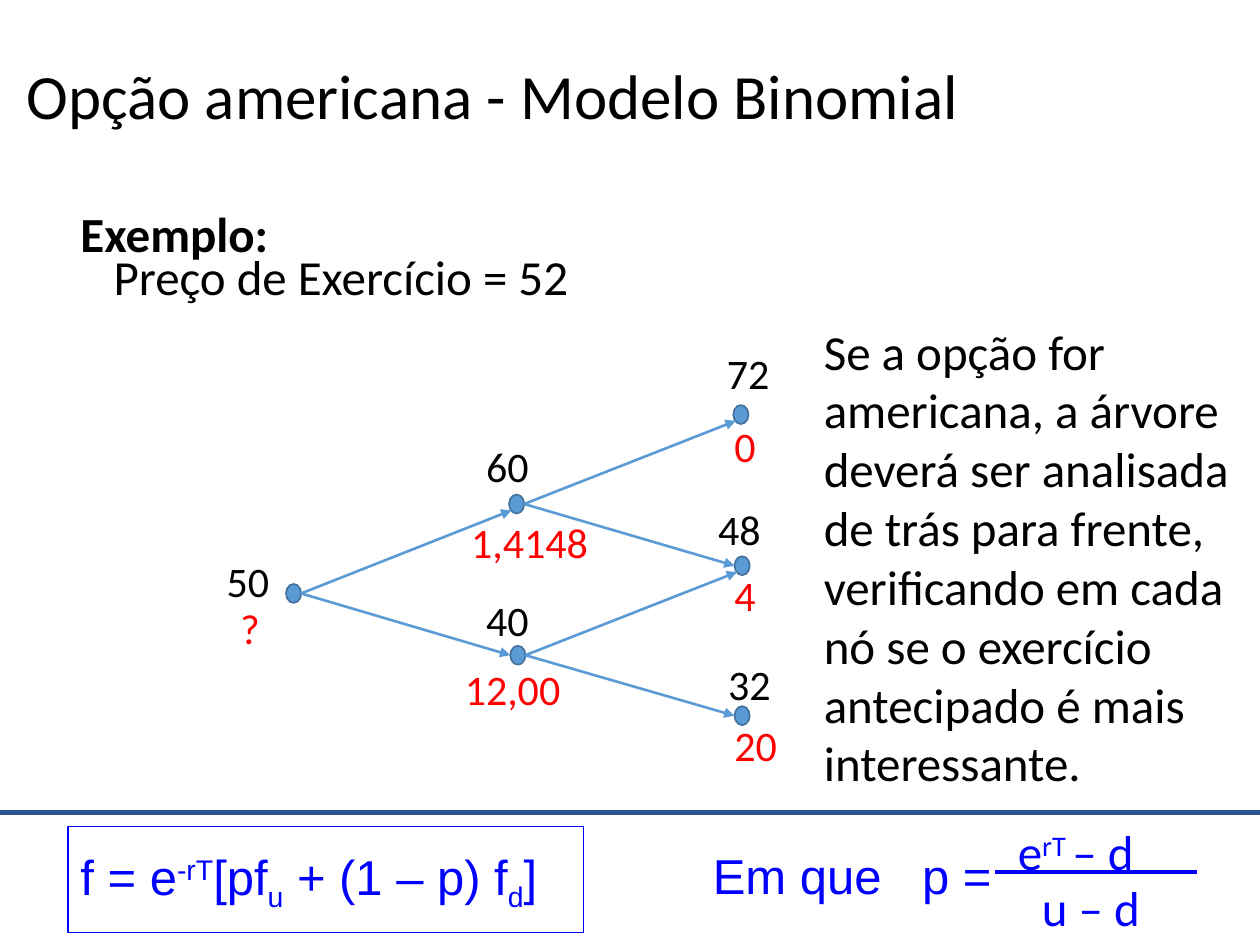
from lxml.etree import SubElement
from pptx import Presentation
from pptx.dml.color import RGBColor
from pptx.enum.shapes import MSO_CONNECTOR, MSO_SHAPE
from pptx.enum.text import MSO_ANCHOR, PP_ALIGN
from pptx.oxml.ns import qn
from pptx.util import Inches, Pt

BLACK = RGBColor(0x00, 0x00, 0x00)
RED = RGBColor(0xFF, 0x00, 0x00)
BLUE = RGBColor(0x00, 0x00, 0xFF)
NAVY = RGBColor(0x2F, 0x55, 0x97)
NODE_FILL = RGBColor(0x5B, 0x9B, 0xD5)
NODE_LINE = RGBColor(0x43, 0x73, 0x9E)

NODE_WIDTH, NODE_HEIGHT = 0.12, 0.15
SUPER, SUB = 30, -25

# Node centres, relative to the tree's corner
NODES = {
    "start": (0.71, 1.50),
    "up": (2.48, 0.79),
    "down": (2.49, 1.99),
    "up up": (4.26, 0.08),
    "middle": (4.27, 1.28),
    "down down": (4.27, 2.47),
}
# Each node's branches: one rising, one falling
BRANCHES = [
    ("start", "up", "down"),
    ("up", "up up", "middle"),
    ("down", "middle", "down down"),
]
# Text, left, top, width, relative to the tree's corner
PRICES = [
    ("50", 0.08, 1.15, 1.12),
    ("60", 2.14, 0.24, 1.12),
    ("40", 2.14, 1.46, 1.12),
    ("72", 4.05, -0.50, 1.12),
    ("48", 3.98, 0.74, 1.12),
    ("32", 4.06, 1.97, 1.12),
]
OPTION_VALUES = [
    ("1,4148", 2.02, 0.84, 1.29),
    ("12,00", 1.97, 2.01, 1.29),
    ("0", 4.11, 0.08, 0.74),
    ("4", 4.11, 1.26, 0.74),
    ("20", 4.11, 2.45, 0.74),
]


def write(frame, spans, size, color, font="Calibri", align=None, spacing=None,
          before=None, bold=None):
    """Fill the first paragraph with (text, baseline) spans."""
    para = frame.paragraphs[0]
    para.alignment = align
    para.line_spacing = spacing
    para.space_before = before
    for text, baseline in spans:
        span = para.add_run()
        span.text = text
        span.font.name = font
        span.font.size = Pt(size)
        span.font.bold = bold
        span.font.color.rgb = color
        if baseline:
            span._r.get_or_add_rPr().set("baseline", str(baseline * 1000))
    return para


def add_text(slide, spans, left, top, width, height, size, color, wrap=True, **style):
    box = slide.shapes.add_textbox(Inches(left), Inches(top), Inches(width), Inches(height))
    box.text_frame.word_wrap = wrap
    return write(box.text_frame, spans, size, color, **style)


def add_line(slide, start, end, color, weight, arrow=False):
    line = slide.shapes.add_connector(
        MSO_CONNECTOR.STRAIGHT, *(Inches(value) for value in (*start, *end)))
    line.line.color.rgb = color
    line.line.width = Pt(weight)
    if arrow:
        SubElement(line.line._get_or_add_ln(), qn("a:tailEnd"), type="triangle")
    SubElement(line._element.spPr, qn("a:effectLst"))


def add_title(slide, left, top, width, height):
    title = slide.shapes.title
    title.left, title.top = Inches(left), Inches(top)
    title.width, title.height = Inches(width), Inches(height)
    title.text_frame.vertical_anchor = MSO_ANCHOR.MIDDLE
    write(title.text_frame, [("Opção americana - Modelo Binomial", 0)], 36, BLACK,
          align=PP_ALIGN.LEFT, spacing=0.9)


def add_example(slide, left, top):
    add_text(slide, [("Exemplo:", 0)], left, top, 7.21, 0.83, 28, BLACK,
             spacing=1.4, before=Pt(10), bold=True)
    add_text(slide, [("Preço de Exercício = 52", 0)], left - 0.04, top + 0.53,
             4.41, 0.57, 28, BLACK, align=PP_ALIGN.CENTER)


def add_tree(slide, left, top):
    centres = {name: (left + x, top + y) for name, (x, y) in NODES.items()}
    for x, y in centres.values():
        node = slide.shapes.add_shape(
            MSO_SHAPE.OVAL, Inches(x - NODE_WIDTH / 2), Inches(y - NODE_HEIGHT / 2),
            Inches(NODE_WIDTH), Inches(NODE_HEIGHT))
        node.shadow.inherit = False
        node.fill.solid()
        node.fill.fore_color.rgb = NODE_FILL
        node.line.color.rgb = NODE_LINE
        node.line.width = Pt(1)

    for origin, rising, falling in BRANCHES:
        x, y = centres[origin]
        start = (x + NODE_WIDTH / 2, y)
        x, y = centres[rising]
        add_line(slide, start, (x - 0.04, y + 0.05), NODE_FILL, 1.5, arrow=True)
        x, y = centres[falling]
        add_line(slide, start, (x - NODE_WIDTH / 2, y), NODE_FILL, 1.5, arrow=True)

    for labels, color in ((PRICES, BLACK), (OPTION_VALUES, RED)):
        for text, x, y, width in labels:
            add_text(slide, [(text, 0)], left + x, top + y, width, 0.5, 24, color)
    add_text(slide, [("?", 0)], left - 0.28, top + 1.52, 1.29, 0.5, 24, RED,
             align=PP_ALIGN.CENTER)


def add_explanation(slide, left, top, width, height):
    text = ("Se a opção for americana, a árvore deverá ser analisada de trás para "
            "frente, verificando em cada nó se o exercício antecipado é mais "
            "interessante.")
    add_text(slide, [(text, 0)], left, top, width, height, 28, BLACK)


def add_value_formula(slide, left, top, width, height):
    box = slide.shapes.add_shape(MSO_SHAPE.RECTANGLE, Inches(left), Inches(top),
                                 Inches(width), Inches(height))
    box.shadow.inherit = False
    box.fill.background()
    box.line.color.rgb = BLUE
    box.line.width = Pt(0.75)
    box.text_frame.vertical_anchor = MSO_ANCHOR.TOP
    spans = [("f = e", 0), ("-rT", SUPER), ("[pf", 0), ("u", SUB),
             (" + (1 – p) f", 0), ("d", SUB), ("]", 0)]
    write(box.text_frame, spans, 28, BLUE, font="Arial", align=PP_ALIGN.LEFT,
          spacing=1.2, before=Pt(5.6))


def add_probability_formula(slide, left, top):
    para = add_text(slide, [("Em que\tp =", 0)], left, top, 4.17, 0.61, 28, BLUE,
                    font="Arial", spacing=1.2, before=Pt(5.6))
    tabs = SubElement(para._p.get_or_add_pPr(), qn("a:tabLst"))
    SubElement(tabs, qn("a:tab"), pos=str(Inches(1.66)), algn="l")
    add_text(slide, [("e", 0), ("rT ", SUPER), ("– d", 0)], left + 2.42, top - 0.19,
             1.32, 0.67, 28, BLUE, wrap=False, spacing=1.2)
    add_text(slide, [("u – d", 0)], left + 2.61, top + 0.25, 1.08, 0.67, 28, BLUE,
             wrap=False, spacing=1.2)
    add_line(slide, (left + 2.34, top + 0.35), (left + 3.94, top + 0.35), BLUE, 2.25)


def main():
    deck = Presentation()
    deck.slide_width, deck.slide_height = Inches(10), Inches(7.5)
    slide = deck.slides.add_slide(deck.slide_layouts[5])
    add_title(slide, 0.11, 0.06, 9.77, 1.45)
    add_example(slide, 0.54, 1.38)
    add_tree(slide, 1.62, 3.21)
    add_explanation(slide, 6.44, 2.5, 3.44, 4.34)
    add_line(slide, (0, 6.45), (10, 6.45), NAVY, 3)
    add_value_formula(slide, 0.54, 6.56, 4.09, 0.84)
    add_probability_formula(slide, 5.56, 6.57)
    deck.save("out.pptx")


if __name__ == "__main__":
    main()
